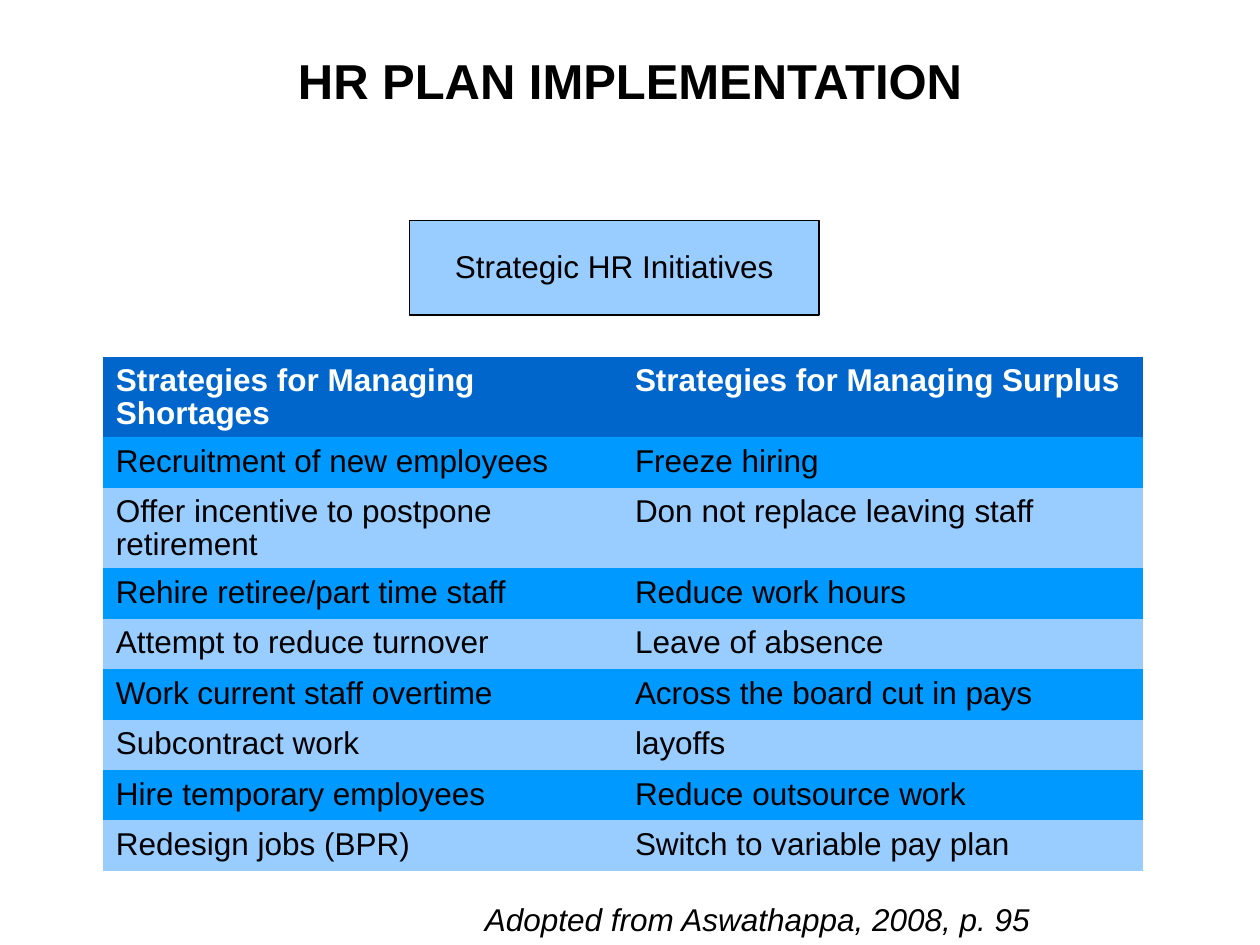
from lxml import etree
from pptx import Presentation
from pptx.dml.color import RGBColor
from pptx.enum.shapes import MSO_SHAPE
from pptx.enum.text import MSO_ANCHOR, MSO_AUTO_SIZE, PP_ALIGN
from pptx.oxml.ns import qn
from pptx.util import Inches, Pt

ROUNDED = MSO_SHAPE.ROUNDED_RECTANGLE
TOP, MIDDLE = MSO_ANCHOR.TOP, MSO_ANCHOR.MIDDLE
LEFT, CENTER = PP_ALIGN.LEFT, PP_ALIGN.CENTER
NO_FIT = MSO_AUTO_SIZE.NONE

COLORS = {
    "black": "000000",
    "white": "FFFFFF",
    "header": "0066CC",
    "band": "0099FF",
    "pale": "99CCFF",
}
STRATEGIES = [
    ("Strategies for Managing Shortages", "Strategies for Managing Surplus"),
    ("Recruitment of new employees", "Freeze hiring"),
    ("Offer incentive to postpone retirement", "Don not replace leaving staff"),
    ("Rehire retiree/part time staff", "Reduce work hours"),
    ("Attempt to reduce turnover", "Leave of absence"),
    ("Work current staff overtime", "Across the board cut in pays"),
    ("Subcontract work", "layoffs"),
    ("Hire temporary employees", "Reduce outsource work"),
    ("Redesign jobs (BPR)", "Switch to variable pay plan"),
]
COLUMN_WIDTHS = (4.12, 4.13)
ROW_HEIGHT = 0.4


def color(name):
    """Return the named colour."""
    return RGBColor.from_string(COLORS[name])


def write(frame, text, ink="black", align=LEFT, spacing=0.93, **formats):
    """Put one formatted paragraph into a text frame."""
    para = frame.paragraphs[0]
    para.alignment = align
    para.line_spacing = spacing
    span = para.add_run()
    span.text = text
    values = {"name": "Arial", "size": Pt(18), "bold": False, **formats}
    for name, value in values.items():
        setattr(span.font, name, value)
    span.font.color.rgb = color(ink)


def set_frame(frame, anchor, top_margin=0.05):
    """Set the wrapping, anchor and margins of a text frame."""
    values = {
        "word_wrap": True,
        "auto_size": NO_FIT,
        "vertical_anchor": anchor,
        "margin_left": Inches(0.1),
        "margin_right": Inches(0.1),
        "margin_top": Inches(top_margin),
        "margin_bottom": Inches(0.05),
    }
    for name, value in values.items():
        setattr(frame, name, value)


def add_title(page, text):
    """Fill and place the title placeholder."""
    title = page.shapes.title
    title.left, title.top = Inches(0.5), Inches(0.3)
    title.width, title.height = Inches(9), Inches(1.4)
    set_frame(title.text_frame, TOP, 0.1)
    write(title.text_frame, text, align=CENTER, spacing=1.0,
          size=Pt(28), bold=True)


def set_borders(cell):
    """Give a cell hairline white borders."""
    properties = cell._tc.get_or_add_tcPr()
    for index, side in enumerate(("lnL", "lnR", "lnT", "lnB")):
        line = etree.Element(qn(f"a:{side}"), w=str(Pt(0.03)))
        fill = etree.SubElement(line, qn("a:solidFill"))
        etree.SubElement(fill, qn("a:srgbClr"), val=COLORS["white"])
        properties.insert(index, line)


def add_strategy_table(page):
    """Add the banded table of strategies."""
    table = page.shapes.add_table(
        len(STRATEGIES), len(COLUMN_WIDTHS), Inches(0.82), Inches(2.83),
        Inches(sum(COLUMN_WIDTHS)), Inches(ROW_HEIGHT * len(STRATEGIES))).table
    for column, width in zip(table.columns, COLUMN_WIDTHS):
        column.width = Inches(width)
    for row, texts in enumerate(STRATEGIES):
        is_header = row == 0
        fill = "header" if is_header else ("pale", "band")[row % 2]
        table.rows[row].height = Inches(ROW_HEIGHT)
        for column, text in enumerate(texts):
            cell = table.cell(row, column)
            cell.margin_top = Inches(0.07)
            cell.fill.solid()
            cell.fill.fore_color.rgb = color(fill)
            set_borders(cell)
            write(cell.text_frame, text, "white" if is_header else "black",
                  bold=is_header)


def add_heading_box(page, text):
    """Add the outlined box above the table."""
    box = page.shapes.add_shape(ROUNDED, Inches(3.25), Inches(1.75),
                                Inches(3.25), Inches(0.75))
    box.adjustments[0] = 0
    box.shadow.inherit = False
    box.fill.solid()
    box.fill.fore_color.rgb = color("pale")
    box.line.color.rgb = color("black")
    box.line.width = Pt(0.75)
    set_frame(box.text_frame, MIDDLE)
    write(box.text_frame, text, align=CENTER)


def add_source_note(page, text):
    """Add the italic source note below the table."""
    box = page.shapes.add_textbox(Inches(3.75), Inches(7.12),
                                  Inches(5.5), Inches(0.38))
    set_frame(box.text_frame, TOP)
    write(box.text_frame, text, italic=True)


def main():
    """Build and save the deck."""
    deck = Presentation()
    deck.slide_width, deck.slide_height = Inches(10), Inches(7.5)
    page = deck.slides.add_slide(deck.slide_layouts[5])
    add_title(page, "HR PLAN IMPLEMENTATION")
    add_strategy_table(page)
    add_heading_box(page, "Strategic HR Initiatives")
    add_source_note(page, "Adopted from Aswathappa, 2008, p. 95")
    deck.save("out.pptx")


if __name__ == "__main__":
    main()
